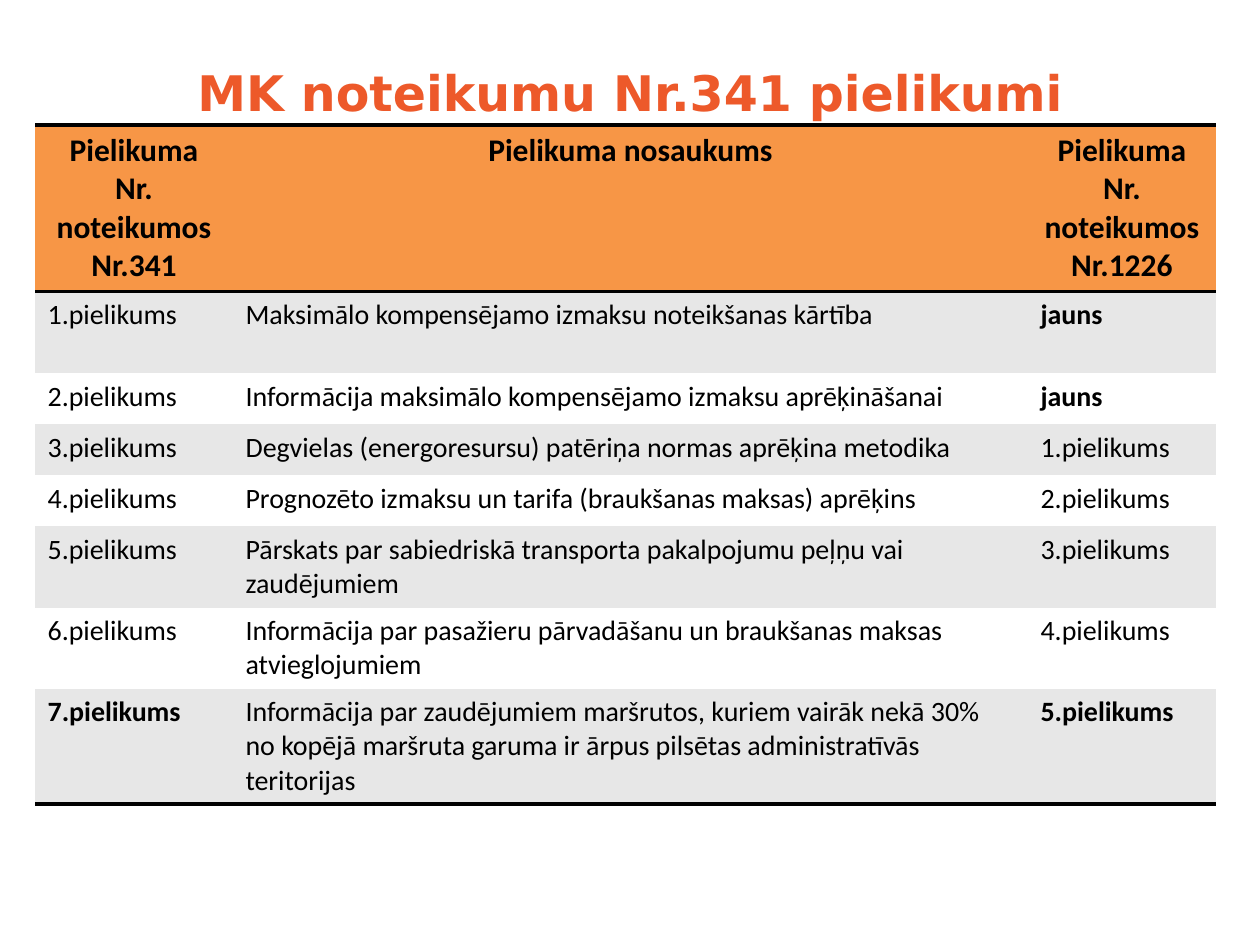
from lxml import etree
from pptx import Presentation
from pptx.dml.color import RGBColor
from pptx.enum.text import MSO_ANCHOR, PP_ALIGN
from pptx.oxml.ns import qn
from pptx.util import Emu, Pt

EMU_PER_PX = 914400 / 126
LEFT, CENTER = PP_ALIGN.LEFT, PP_ALIGN.CENTER
MIDDLE = MSO_ANCHOR.MIDDLE
TITLE_ONLY = 5
PLAIN_TABLE_STYLE = "{2D5ABB26-0587-4C30-8999-92F81FD0307C}"

BLACK, WHITE, GREY = "000000", "FFFFFF", "E7E7E7"
ORANGE, TITLE_RED = "F79646", "ED592A"

COLUMN_WIDTHS = [198, 795, 188]
ROW_HEIGHTS = [166, 82, 51, 51, 51, 81, 81, 115]
HEADINGS = [
    "Pielikuma Nr. noteikumos Nr.341",
    "Pielikuma nosaukums",
    "Pielikuma Nr. noteikumos Nr.1226",
]
ANNEXES = [
    ("1.pielikums", "Maksimālo kompensējamo izmaksu noteikšanas kārtība", "jauns"),
    ("2.pielikums", "Informācija maksimālo kompensējamo izmaksu aprēķināšanai", "jauns"),
    ("3.pielikums", "Degvielas (energoresursu) patēriņa normas aprēķina metodika", "1.pielikums"),
    ("4.pielikums", "Prognozēto izmaksu un tarifa (braukšanas maksas) aprēķins", "2.pielikums"),
    ("5.pielikums", "Pārskats par sabiedriskā transporta pakalpojumu peļņu vai zaudējumiem",
     "3.pielikums"),
    ("6.pielikums", "Informācija par pasažieru pārvadāšanu un braukšanas maksas atvieglojumiem",
     "4.pielikums"),
    ("7.pielikums", "Informācija par zaudējumiem maršrutos, kuriem vairāk nekā 30% no kopējā "
     "maršruta garuma ir ārpus pilsētas administratīvās teritorijas", "5.pielikums"),
]
BOLD_ENTRIES = {"jauns", "7.pielikums", "5.pielikums"}


def px(length):
    return Emu(round(length * EMU_PER_PX))


def color(hex_code):
    return RGBColor.from_string(hex_code)


def write(frame, text, size=16, font="Calibri", ink=BLACK, bold=False, align=LEFT):
    paragraph = frame.paragraphs[0]
    paragraph.alignment = align
    run = paragraph.add_run()
    run.text = text
    run.font.size = Pt(size)
    run.font.name = font
    run.font.bold = bold
    run.font.color.rgb = color(ink)


def add_rule(cell, edge, width=2):
    rule = etree.Element(qn(f"a:{edge}"), w=str(Pt(width)))
    fill = etree.SubElement(rule, qn("a:solidFill"))
    etree.SubElement(fill, qn("a:srgbClr"), val=BLACK)
    cell._tc.get_or_add_tcPr().insert(0, rule)


def fill_cell(cell, text, background, edges=(), **text_format):
    cell.fill.solid()
    cell.fill.fore_color.rgb = color(background)
    for edge in edges:
        add_rule(cell, edge)
    write(cell.text_frame, text, **text_format)


def add_title(slide, text):
    title = slide.shapes.title
    title.left, title.top, title.width, title.height = map(px, (63, 38, 1134, 107))
    title.text_frame.vertical_anchor = MIDDLE
    write(title.text_frame, text, size=28, font="DejaVu Sans", ink=TITLE_RED,
          bold=True, align=CENTER)


def add_annex_table(slide, left, top):
    frame = slide.shapes.add_table(
        len(ROW_HEIGHTS), len(COLUMN_WIDTHS), px(left), px(top),
        px(sum(COLUMN_WIDTHS)), px(sum(ROW_HEIGHTS)))
    next(frame.element.iter(qn("a:tableStyleId"))).text = PLAIN_TABLE_STYLE
    table = frame.table
    table.horz_banding = False
    for column, width in zip(table.columns, COLUMN_WIDTHS):
        column.width = px(width)
    for row, height in zip(table.rows, ROW_HEIGHTS):
        row.height = px(height)

    for column, heading in enumerate(HEADINGS):
        fill_cell(table.cell(0, column), heading, ORANGE, ("lnB", "lnT"),
                  size=18, bold=True, align=CENTER)
    for row, annex in enumerate(ANNEXES, start=1):
        background = GREY if row % 2 else WHITE
        edges = ("lnB",) if row == len(ANNEXES) else ()
        for column, entry in enumerate(annex):
            is_bold = entry in BOLD_ENTRIES and (row != 5)
            fill_cell(table.cell(row, column), entry, background, edges, bold=is_bold)


def main():
    presentation = Presentation()
    presentation.slide_width, presentation.slide_height = px(1260), px(945)
    slide = presentation.slides.add_slide(presentation.slide_layouts[TITLE_ONLY])
    add_title(slide, "MK noteikumu Nr.341 pielikumi")
    add_annex_table(slide, left=35, top=125)
    presentation.save("out.pptx")


if __name__ == "__main__":
    main()
